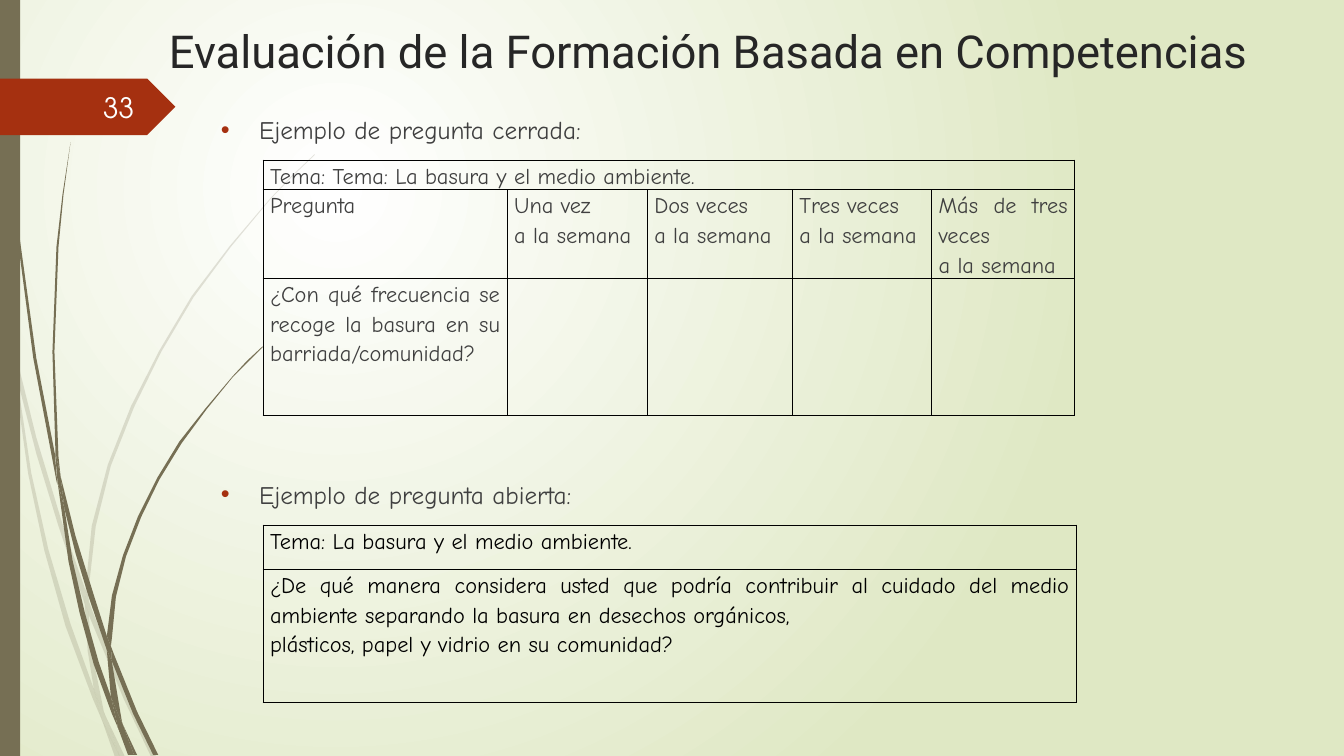
from lxml.etree import SubElement
from pptx import Presentation
from pptx.dml.color import RGBColor
from pptx.enum.shapes import MSO_SHAPE
from pptx.enum.text import MSO_ANCHOR, MSO_AUTO_SIZE, PP_ALIGN
from pptx.oxml.ns import qn
from pptx.util import Inches, Pt

OLIVE = RGBColor(0x76, 0x6F, 0x54)
RUST = RGBColor(0xA5, 0x30, 0x10)
PALE_GREEN = RGBColor(0xDF, 0xE8, 0xC4)
WHITE = RGBColor(0xFF, 0xFF, 0xFF)
NUMBER_WHITE = RGBColor(0xFE, 0xFF, 0xFF)
TITLE_GREY = RGBColor(0x26, 0x26, 0x26)
TEXT_GREY = RGBColor(0x40, 0x40, 0x40)
BLACK = RGBColor(0, 0, 0)

JUSTIFIED = {"alignment": PP_ALIGN.JUSTIFY, "line_spacing": 1.15}
BULLET_FONT = {"name": "Comic Neue", "size": Pt(18)}
CELL_FONT = {"name": "Comic Neue", "size": Pt(16)}
CELL_MARGINS = {"margin_left": Inches(0.07), "margin_right": Inches(0.07),
                "margin_top": 0, "margin_bottom": 0}

# Each grass piece is an outline of (x, y) points in inches.
FAINT_GRASS = [
    [(0.11, 3.5), (0.09, 3.22), (0, 2.82), (0, 2.99), (0.1, 3.44)],
    [(0.58, 5.22), (0.84, 5.99), (0.85, 5.86), (0.62, 5.2), (0.36, 4.34), (0.14, 3.45),
     (0.17, 3.76), (0.36, 4.5)],
    [(0.92, 6.07), (0.88, 5.96), (0.88, 6.1), (1.23, 6.94), (1.5, 7.51), (1.55, 7.51),
     (1.27, 6.92)],
    [(1.19, 7.51), (1.24, 7.51), (1.05, 7.11)],
    [(0.93, 6.83), (0.7, 6.19), (0.48, 5.45), (0.31, 4.69), (0.17, 3.76), (0.11, 3.5),
     (0.28, 4.7), (0.44, 5.46), (0.65, 6.21), (0.92, 6.93), (1.01, 7.14), (0.99, 7.07)],
    [(0.84, 5.99), (0.87, 6.46), (0.93, 6.83), (0.96, 6.92), (1.05, 7.11), (1.03, 7.06),
     (0.91, 6.46), (0.88, 6.1), (0.88, 6.08)],
    [(0.88, 5.84), (0.95, 5.22), (1.1, 4.62), (1.33, 4.04), (1.6, 3.49), (1.92, 2.95),
     (2.29, 2.45), (2.68, 1.98), (2.9, 1.75), (3.12, 1.54), (3.12, 1.53), (2.89, 1.75),
     (2.68, 1.97), (2.28, 2.44), (1.9, 2.94), (1.58, 3.48), (1.3, 4.03), (1.07, 4.61),
     (0.91, 5.22), (0.85, 5.84), (0.85, 5.86), (0.88, 5.96)],
    [(1.01, 7.14), (1.14, 7.51), (1.19, 7.51)],
    [(0.88, 6.08), (0.88, 6.1), (0.88, 5.96), (0.85, 5.86), (0.84, 5.99)],
    [(0.96, 6.92), (0.93, 6.83), (0.99, 7.07), (1.01, 7.14), (1.19, 7.51), (1.05, 7.11)],
]
DARK_GRASS = [
    [(0.07, 1.1), (0.17, 2.33), (0.33, 3.55), (0.56, 4.77), (0.57, 4.81), (0.55, 4.57),
     (0.55, 4.53), (0.36, 3.55), (0.19, 2.32), (0.08, 1.09), (0.05, 0.48), (0.03, 0),
     (0.03, 0.48)],
    [(0.88, 5.92), (1.06, 6.45), (1.06, 6.31), (0.93, 5.9), (0.75, 5.32), (0.6, 4.72),
     (0.64, 5.05), (0.75, 5.49)],
    [(1.13, 6.49), (1.1, 6.41), (1.11, 6.56), (1.32, 7.08), (1.52, 7.49), (1.57, 7.49),
     (1.36, 7.06)],
    [(1.1, 6.91), (0.98, 6.57), (0.84, 6.07), (0.72, 5.56), (0.64, 5.05), (0.57, 4.77),
     (0.68, 5.57), (0.79, 6.08), (0.93, 6.59), (1.11, 7.08), (1.17, 7.22), (1.16, 7.17)],
    [(0.6, 4.72), (0.58, 4.53), (0.54, 3.49), (0.58, 2.45), (0.63, 1.93), (0.7, 1.41),
     (0.62, 1.93), (0.56, 2.45), (0.52, 3.49), (0.55, 4.49)],
    [(1.33, 7.49), (1.36, 7.49), (1.22, 7.19)],
    [(0.57, 4.77), (0.64, 5.05), (0.6, 4.72), (0.55, 4.49), (0.55, 4.53)],
    [(1.11, 6.33), (1.15, 5.92), (1.25, 5.52), (1.4, 5.13), (1.58, 4.76), (1.8, 4.4),
     (2.05, 4.06), (2.31, 3.74), (2.46, 3.59), (2.61, 3.44), (2.6, 3.44), (2.45, 3.58),
     (2.31, 3.73), (2.04, 4.05), (1.78, 4.38), (1.56, 4.74), (1.37, 5.12), (1.22, 5.51),
     (1.11, 5.91), (1.06, 6.31), (1.1, 6.41)],
    [(1.17, 7.22), (1.27, 7.49), (1.31, 7.49)],
    [(1.06, 6.45), (1.1, 6.91), (1.16, 7.06), (1.22, 7.19), (1.21, 7.16), (1.11, 6.56)],
    [(1.06, 6.45), (1.11, 6.56), (1.1, 6.41), (1.06, 6.31)],
    [(1.16, 7.06), (1.1, 6.91), (1.16, 7.17), (1.17, 7.22), (1.3, 7.49), (1.33, 7.49),
     (1.22, 7.19)],
]


def apply_format(target, values):
    for attribute, value in values.items():
        setattr(target, attribute, value)


def format_paragraph(paragraph, layout, font, color):
    apply_format(paragraph, layout)
    apply_format(paragraph.font, font)
    paragraph.font.color.rgb = color


def fill_plain(shape, color):
    shape.shadow.inherit = False
    shape.fill.solid()
    shape.fill.fore_color.rgb = color
    shape.line.fill.background()


def set_background(slide):
    """Radial gradient, white at a quarter of the width and height."""
    fill = slide.background.fill
    fill.gradient()
    for stop, color in zip(fill.gradient_stops, (WHITE, PALE_GREEN)):
        stop.color.rgb = color
    gradient = slide.element.find(".//" + qn("a:gradFill"))
    gradient.remove(gradient.find(qn("a:lin")))
    circle = SubElement(gradient, qn("a:path"), path="circle")
    SubElement(circle, qn("a:fillToRect"), l="50000", t="50000", r="100000", b="100000")


def add_grass(slide, outlines, opacity=100):
    clump = slide.shapes.add_group_shape()
    for outline in outlines:
        points = [(Inches(x), Inches(y)) for x, y in outline]
        builder = clump.shapes.build_freeform(*points[0])
        builder.add_line_segments(points[1:], close=True)
        blade = builder.convert_to_shape()
        fill_plain(blade, OLIVE)
        if opacity < 100:
            color = blade.element.spPr.find(".//" + qn("a:srgbClr"))
            SubElement(color, qn("a:alpha"), val=str(opacity * 1000))


def add_block(slide, preset, left, top, width, height, color):
    block = slide.shapes.add_shape(preset, Inches(left), Inches(top),
                                   Inches(width), Inches(height))
    fill_plain(block, color)


def place_placeholder(slide, placeholder, left, top, width, height):
    """Moves the placeholder, brings it forward and returns its text frame."""
    apply_format(placeholder, {"left": Inches(left), "top": Inches(top),
                               "width": Inches(width), "height": Inches(height)})
    slide.shapes.element.append(placeholder.element)
    frame = placeholder.text_frame
    apply_format(frame, {"word_wrap": True, "auto_size": MSO_AUTO_SIZE.NONE,
                         "vertical_anchor": MSO_ANCHOR.TOP})
    return frame


def add_bullet(paragraph):
    properties = paragraph._p.get_or_add_pPr()
    properties.set("marL", str(Inches(0.38)))
    properties.set("indent", str(-Inches(0.38)))
    bullet_color = SubElement(properties, qn("a:buClr"))
    SubElement(bullet_color, qn("a:srgbClr"), val=str(RUST))
    SubElement(properties, qn("a:buFont"), typeface="Arial")
    SubElement(properties, qn("a:buChar"), char="•")


def fill_body(frame, examples):
    frame.text = "\n".join(text for text, _ in examples)
    for paragraph, (_, space_before) in zip(frame.paragraphs, examples):
        format_paragraph(paragraph, {**JUSTIFIED, "space_before": Pt(space_before)},
                         BULLET_FONT, TEXT_GREY)
        add_bullet(paragraph)


def add_page_number(slide, number):
    box = slide.shapes.add_textbox(Inches(0.58), Inches(0.86), Inches(0.85), Inches(0.4))
    frame = box.text_frame
    apply_format(frame, {"word_wrap": True, "vertical_anchor": MSO_ANCHOR.MIDDLE})
    frame.text = number
    format_paragraph(frame.paragraphs[0], {"alignment": PP_ALIGN.RIGHT},
                     {"name": "TeX Gyre Adventor", "size": Pt(20)}, NUMBER_WHITE)


def border_cell(cell):
    properties = cell._tc.get_or_add_tcPr()
    for position, side in enumerate(("a:lnL", "a:lnR", "a:lnT", "a:lnB")):
        line = properties.makeelement(qn(side), {"w": str(Pt(1))})
        properties.insert(position, line)
        SubElement(SubElement(line, qn("a:solidFill")), qn("a:srgbClr"), val=str(BLACK))


def add_question_table(slide, top, widths, heights, rows, color):
    """Bordered table whose first row, the topic, spans every column."""
    table = slide.shapes.add_table(len(heights), len(widths), Inches(2.61), Inches(top),
                                   Inches(sum(widths)), Inches(sum(heights))).table
    apply_format(table, {"first_row": False, "horz_banding": False})
    for column, width in zip(table.columns, widths):
        column.width = Inches(width)
    for row, height, texts in zip(table.rows, heights, rows):
        row.height = Inches(height)
        for cell, text in zip(row.cells, texts + [""] * (len(widths) - len(texts))):
            apply_format(cell, CELL_MARGINS)
            cell.fill.background()
            border_cell(cell)
            cell.text = text
            for paragraph in cell.text_frame.paragraphs:
                format_paragraph(paragraph, JUSTIFIED, CELL_FONT, color)
    if len(widths) > 1:
        table.cell(0, 0).merge(table.cell(0, len(widths) - 1))


def main():
    presentation = Presentation()
    apply_format(presentation, {"slide_width": Inches(13.33), "slide_height": Inches(7.5)})
    slide = presentation.slides.add_slide(presentation.slide_layouts[1])
    set_background(slide)
    add_grass(slide, FAINT_GRASS, opacity=20)
    add_grass(slide, DARK_GRASS)
    add_block(slide, MSO_SHAPE.RECTANGLE, 0, 0, 0.2, 7.5, OLIVE)
    add_block(slide, MSO_SHAPE.PENTAGON, -0.01, 0.78, 1.75, 0.56, RUST)

    body = place_placeholder(slide, slide.placeholders[1], 2.09, 1.04, 11.01, 6.27)
    fill_body(body, [("Ejemplo de pregunta cerrada:", 10),
                     ("Ejemplo de pregunta abierta:", 235.5)])
    add_page_number(slide, "33")
    title = place_placeholder(slide, slide.shapes.title, 1.47, 0.18, 11.11, 0.68)
    title.text = "Evaluación de la Formación Basada en Competencias"
    format_paragraph(title.paragraphs[0], {"alignment": PP_ALIGN.CENTER},
                     {"name": "Roboto", "size": Pt(32.4)}, TITLE_GREY)

    frequencies = [f"{times}\na la semana" for times in
                   ("Una vez", "Dos veces", "Tres veces", "Más de tres veces")]
    add_question_table(slide, 1.59, [2.42, 1.39, 1.44, 1.38, 1.42], [0.29, 0.88, 1.36], [
        ["Tema: Tema: La basura y el medio ambiente."],
        ["Pregunta"] + frequencies,
        ["¿Con qué frecuencia se recoge la basura en su barriada/comunidad?"],
    ], TEXT_GREY)
    add_question_table(slide, 5.21, [8.07], [0.44, 1.32], [
        ["Tema: La basura y el medio ambiente."],
        ["¿De qué manera considera usted que podría contribuir al cuidado del medio "
         "ambiente separando la basura en desechos orgánicos,\n"
         "plásticos, papel y vidrio en su comunidad?"],
    ], BLACK)
    presentation.save("out.pptx")


if __name__ == "__main__":
    main()
